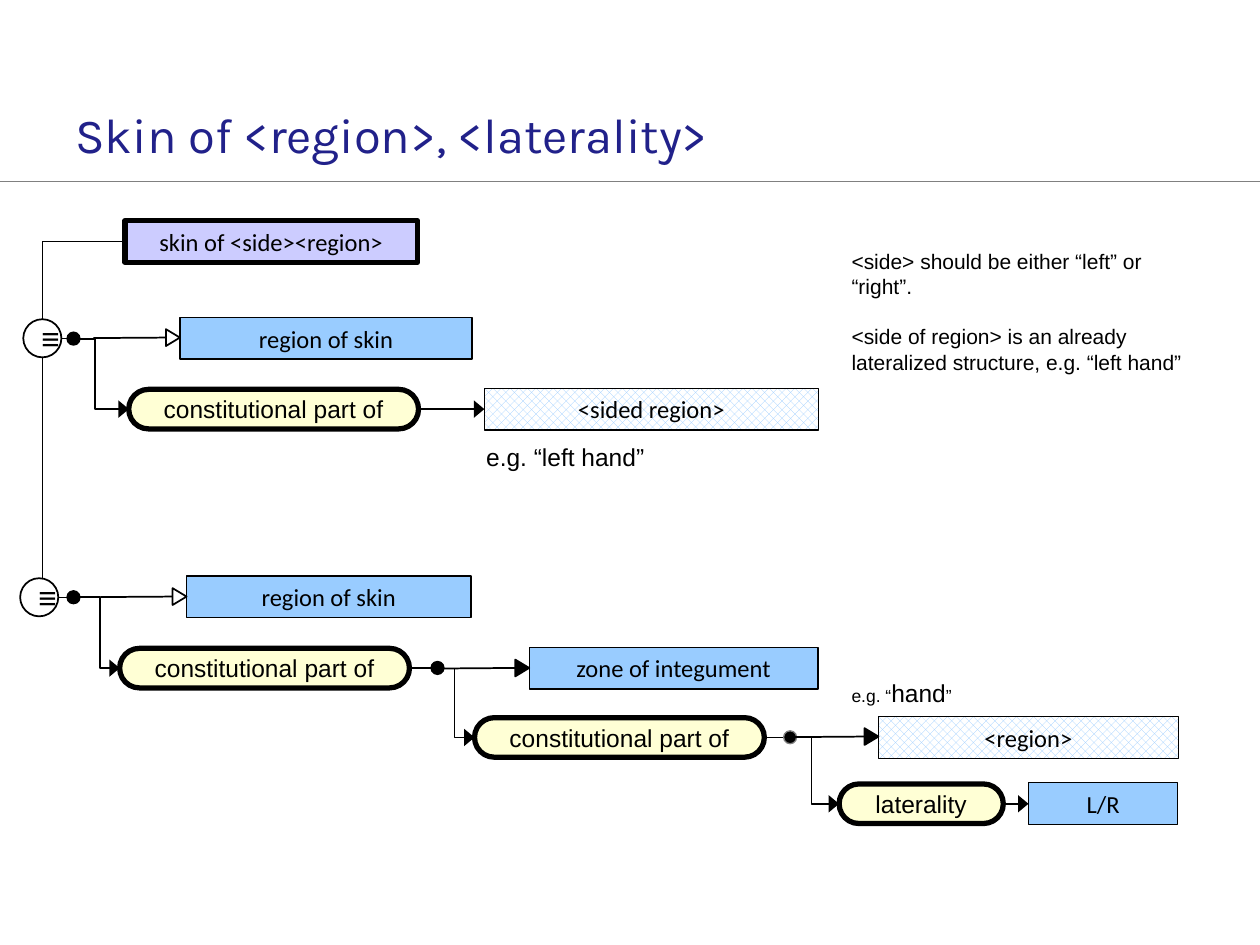
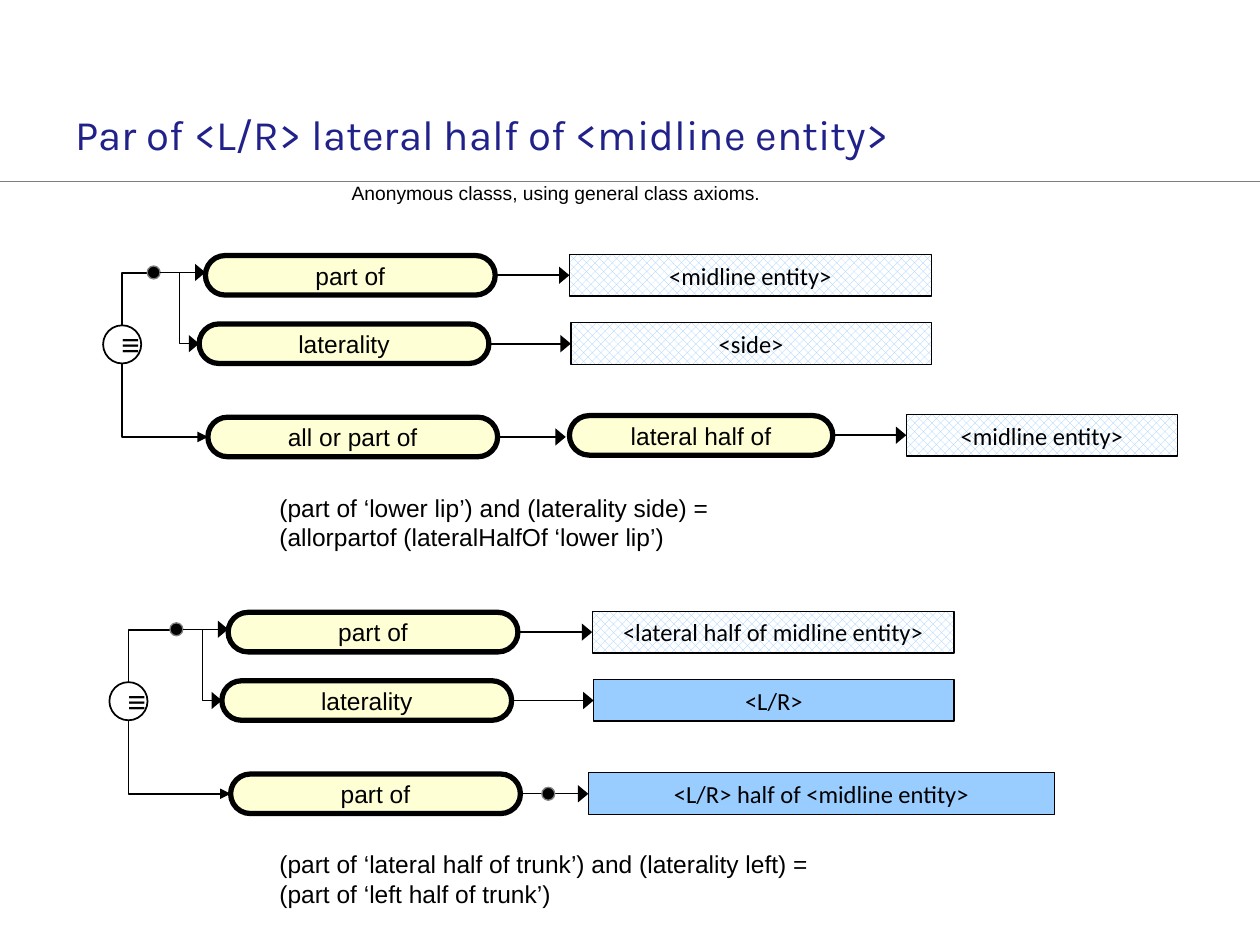
from dataclasses import dataclass

from lxml import etree
from pptx import Presentation
from pptx.dml.color import RGBColor
from pptx.enum.dml import MSO_PATTERN
from pptx.enum.shapes import MSO_CONNECTOR, MSO_SHAPE
from pptx.enum.text import MSO_ANCHOR, PP_ALIGN
from pptx.oxml.ns import qn
from pptx.shapes.autoshape import Shape
from pptx.slide import Slide
from pptx.text.text import TextFrame, _Run
from pptx.util import Pt

RECT, PILL = MSO_SHAPE.RECTANGLE, MSO_SHAPE.ROUNDED_RECTANGLE
OVAL, TRIANGLE = MSO_SHAPE.OVAL, MSO_SHAPE.ISOSCELES_TRIANGLE
STRAIGHT, ELBOW = MSO_CONNECTOR.STRAIGHT, MSO_CONNECTOR.ELBOW
MIDDLE, CENTER = MSO_ANCHOR.MIDDLE, PP_ALIGN.CENTER
DOTTED = MSO_PATTERN.PERCENT_50

COLORS = {
    "ink": "000000", "paper": "FFFFFF", "title": "21218A", "rule": "808080",
    "concept": "99CCFF", "defined": "CCCCFF", "relation": "FFFFD5", "gray": "808080",
}
DOT, CIRCLE = 7.4, 21.8


@dataclass(frozen=True)
class Style:
    outline: MSO_SHAPE
    fill: str
    border: float
    height: float
    font: str
    inset_x: float
    inset_y: float
    patterned: bool = False


CONCEPT = Style(RECT, "concept", 0.75, 23.8, "Calibri", 5, 2.2)
VARIABLE = Style(RECT, "concept", 0.75, 23.8, "Calibri", 5, 2.2, True)
DEFINED = Style(RECT, "defined", 3, 23.8, "Calibri", 5, 2.2)
RELATION = Style(PILL, "relation", 3, 22.6, "Arial", 7.2, 3.6)


@dataclass(frozen=True)
class Node:
    label: str
    left: float
    mid: float
    width: float
    style: Style = RELATION


@dataclass(frozen=True)
class Link:
    x1: float
    y1: float
    x2: float
    y2: float
    head: str = ""           # arrowhead width: "", "med" or "lg"
    bend: float | None = None  # distance from the start to the vertical leg
    weight: float = 1


@dataclass(frozen=True)
class Dot:
    x: float
    y: float
    edge: str = "ink"


@dataclass(frozen=True)
class Subsumption:
    start: float
    tip: float
    mid: float
    solid: bool = False


@dataclass(frozen=True)
class Note:
    left: float
    top: float
    width: float
    height: float
    lines: tuple[str, ...]
    size: float = 14
    gap: float = 0
    wrap: bool = True


def color(name: str) -> RGBColor:
    return RGBColor.from_string(COLORS[name])


def style_run(run: _Run, size: float, font: str = "Arial", ink: str = "ink") -> None:
    run.font.size, run.font.name = Pt(size), font
    run.font.color.rgb = color(ink)


def add_outline(slide: Slide, outline: MSO_SHAPE, x: float, y: float,
                width: float, height: float, border: float, edge: str = "ink") -> Shape:
    """Add a shape without shadow, centred on x, y."""
    shape = slide.shapes.add_shape(outline, Pt(x - width / 2), Pt(y - height / 2),
                                   Pt(width), Pt(height))
    shape.shadow.inherit = False
    shape.line.color.rgb, shape.line.width = color(edge), Pt(border)
    return shape


def fill_solid(shape: Shape, name: str) -> None:
    shape.fill.solid()
    shape.fill.fore_color.rgb = color(name)


def add_label(shape: Shape, label: str, size: float, font: str) -> None:
    frame = shape.text_frame
    frame.text, frame.word_wrap, frame.vertical_anchor = label, True, MIDDLE
    frame.paragraphs[0].alignment = CENTER
    style_run(frame.paragraphs[0].runs[0], size, font)


def draw_node(slide: Slide, node: Node) -> None:
    style = node.style
    shape = add_outline(slide, style.outline, node.left + node.width / 2, node.mid,
                        node.width, style.height, style.border)
    if style.outline == PILL:
        shape.adjustments[0] = 0.5
    if style.patterned:
        shape.fill.patterned()
        shape.fill.pattern = DOTTED
        shape.fill.fore_color.rgb = color(style.fill)
        shape.fill.back_color.rgb = color("paper")
    else:
        fill_solid(shape, style.fill)
    frame = shape.text_frame
    frame.margin_left = frame.margin_right = Pt(style.inset_x)
    frame.margin_top = frame.margin_bottom = Pt(style.inset_y)
    add_label(shape, node.label, 14, style.font)


def draw_link(slide: Slide, link: Link, ink: str = "ink") -> None:
    kind = STRAIGHT if link.bend is None else ELBOW
    line = slide.shapes.add_connector(kind, Pt(link.x1), Pt(link.y1),
                                      Pt(link.x2), Pt(link.y2))
    line.line.color.rgb, line.line.width = color(ink), Pt(link.weight)
    properties = line._element.spPr
    if link.bend is not None:
        share = round(100000 * link.bend / (link.x2 - link.x1))
        guides = properties.find(qn("a:prstGeom")).get_or_add_avLst()
        etree.SubElement(guides, qn("a:gd"), name="adj1", fmla=f"val {share}")
    if link.head:
        etree.SubElement(properties.find(qn("a:ln")), qn("a:tailEnd"),
                         type="triangle", w=link.head, len="med")
    etree.SubElement(properties, qn("a:effectLst"))


def draw_dot(slide: Slide, dot: Dot) -> None:
    fill_solid(add_outline(slide, OVAL, dot.x, dot.y, DOT, DOT, 0.75, dot.edge), "ink")


def draw_subsumption(slide: Slide, arrow: Subsumption) -> None:
    length = 8
    head = add_outline(slide, TRIANGLE, arrow.tip - length / 2, arrow.mid, 9.6, length, 1)
    head.rotation = 90
    if arrow.solid:
        fill_solid(head, "ink")
    else:
        head.fill.background()
    draw_link(slide, Link(arrow.start, arrow.mid + 0.3, arrow.tip - length, arrow.mid))


def draw_equivalence(slide: Slide, x: float, y: float) -> None:
    circle = add_outline(slide, OVAL, x, y, CIRCLE, CIRCLE, 1)
    fill_solid(circle, "paper")
    add_label(circle, "≡", 18, "Courier New")


def draw_note(slide: Slide, note: Note) -> TextFrame:
    frame = slide.shapes.add_textbox(Pt(note.left), Pt(note.top),
                                     Pt(note.width), Pt(note.height)).text_frame
    frame.text, frame.word_wrap = "\n".join(note.lines), note.wrap
    for index, paragraph in enumerate(frame.paragraphs):
        if index and note.gap:
            paragraph.space_before = Pt(note.gap)
        style_run(paragraph.runs[0], note.size)
    return frame


def start_slide(deck: Presentation, title: str, size: float) -> Slide:
    """Add a blank slide with the shared rule and title."""
    slide = deck.slides.add_slide(deck.slide_layouts[6])
    draw_link(slide, Link(0, 103.7, 720, 103.7, weight=0.75), "rule")
    frame = slide.shapes.add_textbox(Pt(36), Pt(56.2), Pt(519), Pt(40.3)).text_frame
    frame.margin_left = frame.margin_right = Pt(7.2)
    frame.margin_top = frame.margin_bottom = Pt(7.2)
    frame.text, frame.word_wrap, frame.vertical_anchor = title, True, MIDDLE
    style_run(frame.paragraphs[0].runs[0], size, "Karla", "title")
    return slide


DRAW = {Node: draw_node, Link: draw_link, Dot: draw_dot,
        Subsumption: draw_subsumption, Note: draw_note}


def draw_all(slide: Slide, *parts: Node | Link | Dot | Subsumption | Note) -> None:
    for part in parts:
        DRAW[type(part)](slide, part)


def build_skin(deck: Presentation) -> None:
    slide = start_slide(deck, "Skin of <region>, <laterality>", 28)
    # Defined class and its spine
    draw_all(
        slide,
        Node("skin of <side><region>", 71.5, 138, 167, DEFINED),
        Link(24.3, 184.3, 71.3, 138, bend=0),
        Link(24.3, 202.5, 24.3, 332, weight=0.75),
    )
    # First definition
    draw_all(
        slide,
        Node("region of skin", 102.8, 193.3, 167, CONCEPT),
        Node("constitutional part of", 73.6, 233.8, 165.6),
        Node("<sided region>", 276.8, 233.8, 190.8, VARIABLE),
        Link(33, 193.6, 38.2, 193.6, weight=0.75),
        Dot(42, 193.5),
        Link(45.8, 193.6, 73.6, 233.8, "lg", 8.5),
        Subsumption(53.3, 102.8, 192.9),
        Link(239, 233.8, 276.8, 233.8, "lg"),
        Note(270.7, 249, 203, 24.3, ("e.g. “left hand”",)),
    )
    # Second definition
    draw_all(
        slide,
        Node("region of skin", 106.6, 341, 162.5, CONCEPT),
        Node("constitutional part of", 68.4, 381.8, 165.6),
        Node("zone of integument", 302.4, 381.8, 165, CONCEPT),
        Node("constitutional part of", 271.2, 421.4, 165.6),
        Node("<region>", 502, 421.5, 171.3, VARIABLE),
        Node("laterality", 479.5, 459.3, 93.8),
        Node("L/R", 587.7, 459.2, 85.3, CONCEPT),
        Link(33, 341.3, 38.2, 341.3, weight=0.75),
        Dot(42, 341.3),
        Link(45.8, 341.3, 68.4, 381.8, "lg", 11.3),
        Subsumption(57.4, 106.6, 340.9),
        Link(234, 381.8, 253.4, 381.8),
        Dot(250, 381.7),
        Link(253.4, 381.8, 271.2, 421.4, "lg", 6.2, 0.75),
        Subsumption(253.4, 302.4, 381.7, True),
        Link(437, 421.3, 455, 421.3, weight=0.75),
        Dot(451.5, 421.3, "gray"),
        Link(455, 421.3, 479.5, 459.3, "lg", 8.8),
        Subsumption(453, 502, 420.9, True),
        Link(573.3, 459.3, 587.7, 459.3, "lg"),
    )
    for x, y in ((24.2, 193.3), (22.4, 341.3)):
        draw_equivalence(slide, x, y)
    # Remarks
    draw_all(slide, Note(479.5, 138.4, 203, 80,
                         ("<side> should be either “left” or “right”.",
                          "<side of region> is an already lateralized structure, "
                          "e.g. “left hand”"), 12, 14.4))
    example = draw_note(slide, Note(479.5, 384, 203, 24.3, ("e.g. “",), 10))
    for text, size in (("hand", 14), ("”", 10)):
        run = example.paragraphs[0].add_run()
        run.text = text
        style_run(run, size)


def draw_axiom(slide: Slide, dx: float, dy: float, circle_x: float, whole: str,
               part_filler: Node, side_filler: Node) -> None:
    """Draw 'part of' and 'laterality' as equivalent to a third relation."""
    part = Node("part of", 117.4 + dx, 157.3 + dy, 165.6)
    side = Node("laterality", 113.8 + dx, 196.4 + dy, 165.6)
    target = Node(whole, 118.8 + dx, 249.7 + dy, 165.6)
    dot = Dot(87.8 + dx, 155.7 + dy, "gray")
    circle_y = 196.8 + dy
    fork = dot.x + DOT / 2
    draw_all(
        slide, part, side, target, part_filler, side_filler,
        Link(circle_x, circle_y - CIRCLE / 2, dot.x - DOT / 2, dot.y + 0.4, bend=0),
        dot,
        Link(fork, dot.y, part.left, dot.y, "lg", weight=0.75),
        Link(fork, dot.y, side.left, side.mid, "lg", 11.2, 0.75),
        Link(circle_x, circle_y + CIRCLE / 2, target.left, target.mid, "med", 0),
    )
    for relation, filler in ((part, part_filler), (side, side_filler)):
        draw_all(slide, Link(relation.left + relation.width, relation.mid,
                             filler.left, relation.mid, "lg"))
    draw_equivalence(slide, circle_x, circle_y)


def build_lateral_half(deck: Presentation) -> None:
    slide = start_slide(deck, "Par of <L/R> lateral half of <midline entity>", 24)
    draw_all(slide, Note(193.8, 100, 269, 21,
                         ("Anonymous classs, using general class axioms.",), 11, wrap=False))
    # Axiom for a midline entity
    draw_axiom(slide, 0, 0, 69.8, "all or part of",
               Node("<midline entity>", 325.4, 157.3, 206.8, VARIABLE),
               Node("<side>", 326.2, 196.3, 206, VARIABLE))
    draw_all(
        slide,
        Link(284.4, 249.7, 323.3, 249.7, "lg", weight=0.75),
        Node("lateral half of", 325.4, 248.8, 150.5),
        Link(476, 248.7, 517.9, 248.7, "lg"),
        Node("<midline entity>", 517.9, 248.8, 155, VARIABLE),
        Note(152.6, 278, 393, 41, ("(part of ‘lower lip’) and (laterality side) =",
                                   "(allorpartof (lateralHalfOf ‘lower lip’)")),
    )
    # Axiom for a lateral half
    draw_axiom(slide, 13, 203.9, 73.4, "part of",
               Node("<lateral half of midline entity>", 338.4, 361.2, 206.8, VARIABLE),
               Node("<L/R>", 339.2, 400.2, 206, CONCEPT))
    draw_all(
        slide,
        Link(297.4, 453.6, 336.2, 453.6, "lg", weight=0.75),
        Dot(313.3, 453.6, "gray"),
        Node("<L/R> half of <midline entity>", 336.2, 453.4, 266.5, CONCEPT),
        Note(152.6, 481.8, 357, 41,
             ("(part of ‘lateral half of trunk’) and (laterality left) =",
              "(part of ‘left half of trunk’)")),
    )


def main() -> None:
    deck = Presentation()
    deck.slide_width, deck.slide_height = Pt(720), Pt(540)
    build_skin(deck)
    build_lateral_half(deck)
    deck.save("out.pptx")


if __name__ == "__main__":
    main()
